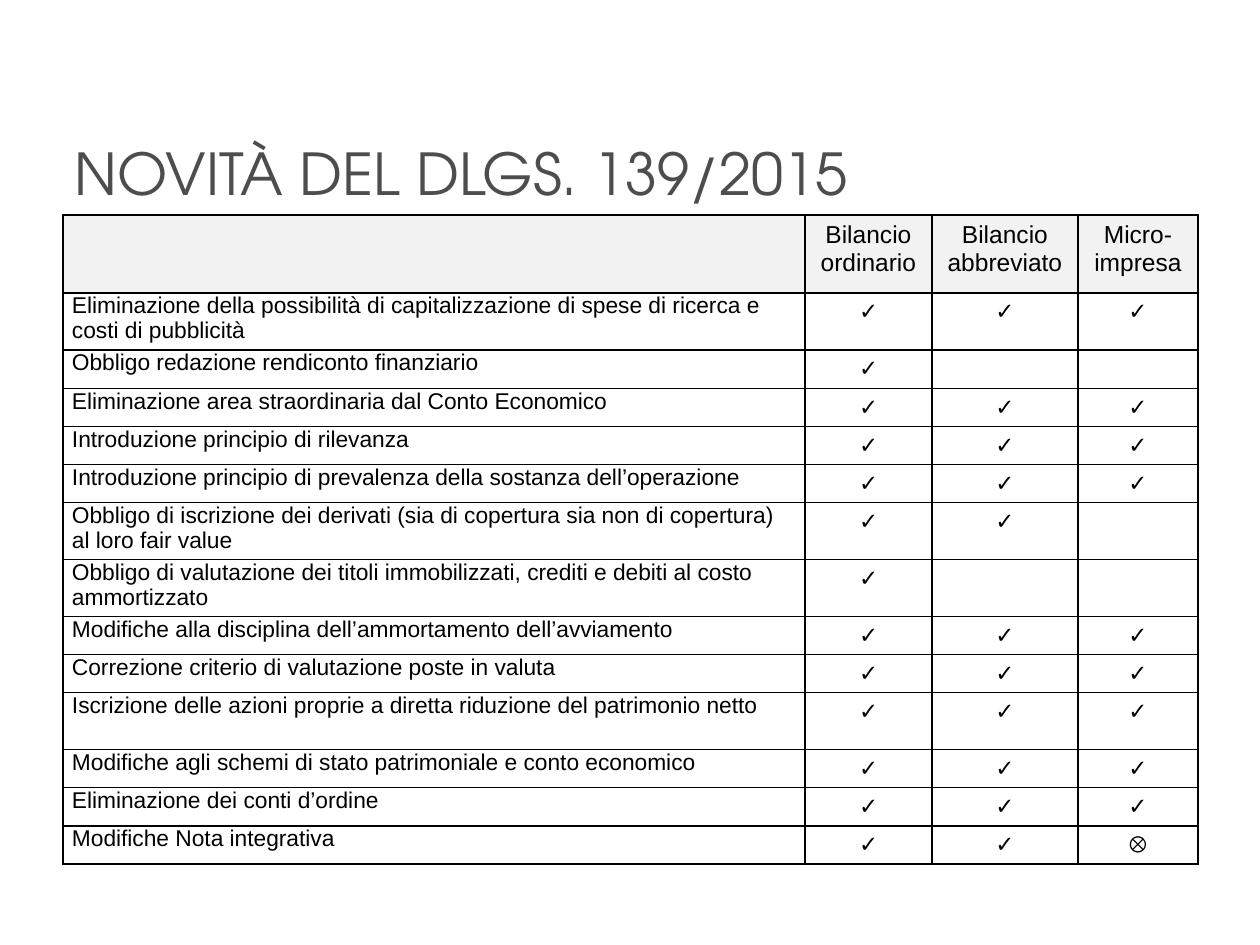
"""Build the slide that lists the changes brought by DLgs. 139/2015."""
import pptx
import pptx.dml.color
import pptx.enum.text
import pptx.oxml
import pptx.oxml.ns
import pptx.util

BLACK = pptx.dml.color.RGBColor(0x00, 0x00, 0x00)
GREY = pptx.dml.color.RGBColor(0x4D, 0x4D, 0x4D)
HEADER_GREY = pptx.dml.color.RGBColor(0xF2, 0xF2, 0xF2)
PX = 914400 // 126

TITLE = "NOVITÀ DEL DLGS. 139/2015"
TITLE_BOX = (62, 135, 1120, 79)
TABLE_ORIGIN = (63, 215)
COLUMN_WIDTHS = [742, 127, 146, 120]
HEADER_HEIGHT, SINGLE, DOUBLE = 78, 38, 57
HEADINGS = ["", "Bilancio ordinario", "Bilancio abbreviato", "Micro-impresa"]
CHANGES = [
    ("Eliminazione della possibilità di capitalizzazione di spese di ricerca e costi di pubblicità",
     "✓✓✓", DOUBLE),
    ("Obbligo redazione rendiconto finanziario", "✓", SINGLE),
    ("Eliminazione area straordinaria dal Conto Economico", "✓✓✓", SINGLE),
    ("Introduzione principio di rilevanza", "✓✓✓", SINGLE),
    ("Introduzione principio di prevalenza della sostanza dell’operazione", "✓✓✓", SINGLE),
    ("Obbligo di iscrizione dei derivati (sia di copertura sia non di copertura) al loro fair value",
     "✓✓", DOUBLE),
    ("Obbligo di valutazione dei titoli immobilizzati, crediti e debiti al costo ammortizzato",
     "✓", DOUBLE),
    ("Modifiche alla disciplina dell’ammortamento dell’avviamento", "✓✓✓", SINGLE),
    ("Correzione criterio di valutazione poste in valuta", "✓✓✓", SINGLE),
    ("Iscrizione delle azioni proprie a diretta riduzione del patrimonio netto", "✓✓✓", DOUBLE),
    ("Modifiche agli schemi di stato patrimoniale e conto economico", "✓✓✓", SINGLE),
    ("Eliminazione dei conti d’ordine", "✓✓✓", SINGLE),
    ("Modifiche Nota integrativa", "✓✓⊗", SINGLE),
]


def px(length):
    return pptx.util.Emu(length * PX)


def add_run(paragraph, wording, size, font, color):
    run = paragraph.add_run()
    run.text = wording
    run.font.size = pptx.util.Pt(size)
    run.font.name = font
    run.font.bold = False
    run.font.color.rgb = color


def add_borders(cell):
    properties = cell._tc.get_or_add_tcPr()
    for position, side in enumerate(("lnL", "lnR", "lnT", "lnB")):
        properties.insert(position, pptx.oxml.parse_xml(
            f'<a:{side} {pptx.oxml.ns.nsdecls("a")} w="12700">'
            f'<a:solidFill><a:srgbClr val="{BLACK}"/></a:solidFill></a:{side}>'))


def fill_cell(cell, wording, is_heading, is_change):
    add_borders(cell)
    if is_heading:
        cell.fill.solid()
        cell.fill.fore_color.rgb = HEADER_GREY
    else:
        cell.fill.background()
    if is_change:
        cell.margin_left = cell.margin_right = px(9)
    if is_change or not wording:
        cell.margin_top = cell.margin_bottom = 0
    if wording:
        paragraph = cell.text_frame.paragraphs[0]
        if not is_change:
            paragraph.alignment = pptx.enum.text.PP_ALIGN.CENTER
        add_run(paragraph, wording, 14 if is_heading else 13, "Arial", BLACK)


def add_changes_table(slide):
    rows = [HEADINGS] + [[change, *marks.ljust(3).replace(" ", "\0")]
                         if len(marks) == 3 else [change, *marks, *[""] * (3 - len(marks))]
                         for change, marks, _ in CHANGES]
    heights = [HEADER_HEIGHT] + [height for _, _, height in CHANGES]
    table = slide.shapes.add_table(
        len(rows), len(HEADINGS), *map(px, TABLE_ORIGIN),
        px(sum(COLUMN_WIDTHS)), px(sum(heights))).table
    table.first_row = table.horz_banding = False
    for column, width in zip(table.columns, COLUMN_WIDTHS):
        column.width = px(width)
    for row_index, (row, height) in enumerate(zip(rows, heights)):
        table.rows[row_index].height = px(height)
        for column_index, wording in enumerate(row):
            is_heading = row_index == 0
            fill_cell(table.cell(row_index, column_index), wording,
                      is_heading, column_index == 0 and not is_heading)


def add_title(slide):
    frame = slide.shapes.add_textbox(*map(px, TITLE_BOX)).text_frame
    frame.word_wrap = True
    frame.vertical_anchor = pptx.enum.text.MSO_ANCHOR.BOTTOM
    frame.paragraphs[0].line_spacing = 0.9
    add_run(frame.paragraphs[0], TITLE, 33, "TeX Gyre Adventor", GREY)


def main():
    deck = pptx.Presentation()
    deck.slide_width, deck.slide_height = px(1260), px(945)
    slide = deck.slides.add_slide(deck.slide_layouts[6])
    add_changes_table(slide)
    add_title(slide)
    deck.save("out.pptx")


if __name__ == "__main__":
    main()
